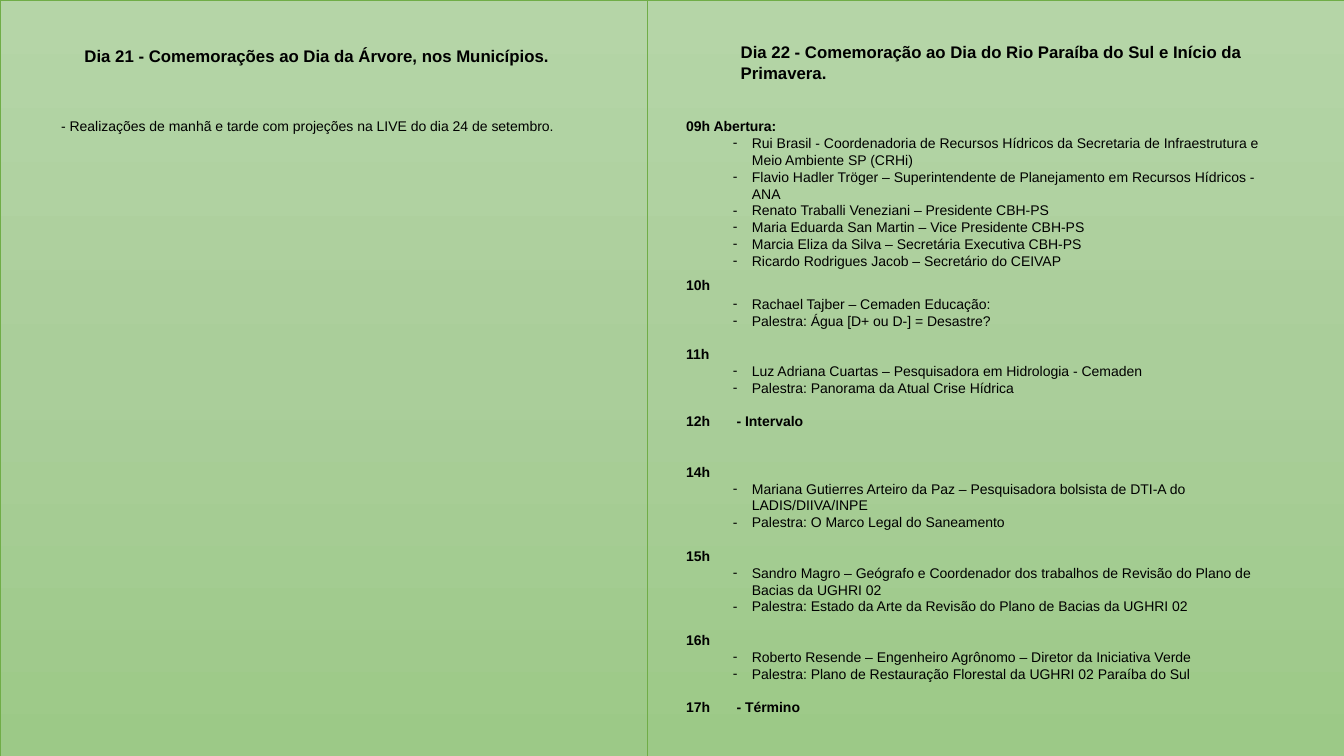
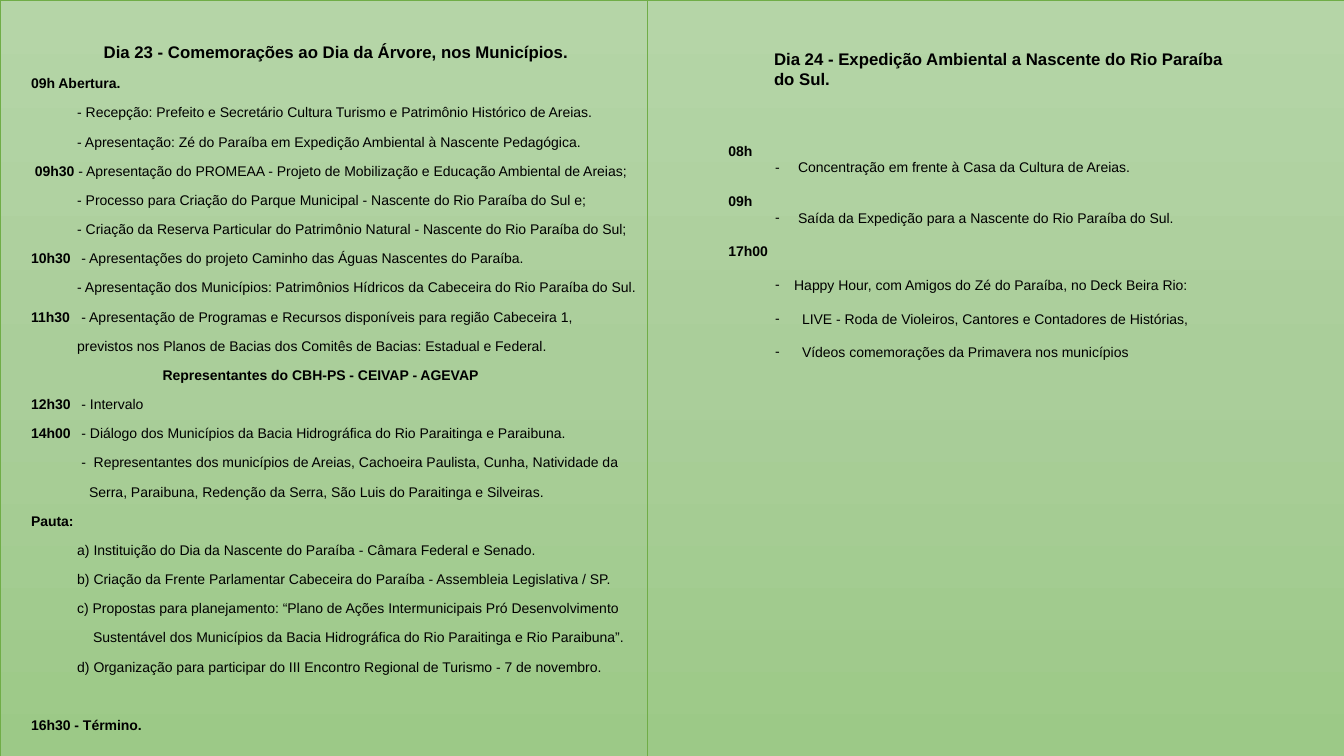
from copy import deepcopy

from pptx import Presentation
from pptx.dml.color import RGBColor
from pptx.enum.shapes import MSO_SHAPE
from pptx.oxml.ns import qn
from pptx.util import Pt
from lxml.etree import SubElement

SLIDE_W, SLIDE_H = 960, 540
PANEL_SPLIT = 462.5
FONT = "Arial"
BLACK = RGBColor(0x00, 0x00, 0x00)
GREEN_LINE = RGBColor(0x70, 0xAD, 0x47)
GREENS = [(0, RGBColor(0xB5, 0xD5, 0xA7)),
          (0.5, RGBColor(0xAA, 0xCE, 0x9A)),
          (1, RGBColor(0x9C, 0xC9, 0x87))]
TITLE_SIZE, BODY_SIZE = 12, 10
BLANK_LINE = 12
BULLET_AT = 33.4

# Paragraph styles; in each text the part before "|" is bold.
PLAIN = {}
GAP = {"before": BLANK_LINE}
BULLET = {"bullet": "-", "left": 47}
ITEM = {"left": 33}
BULLET_WIDE = {**BULLET, "left": 49.8}
BULLET_WIDEST = {**BULLET, "left": 52.6, **GAP}

DAY_21 = [
    ("- Realizações de manhã e tarde com projeções na LIVE do dia 24 de setembro.", PLAIN),
]
DAY_22_OPENING = [
    ("09h Abertura:|", PLAIN),
    ("Rui Brasil - Coordenadoria de Recursos Hídricos da Secretaria de Infraestrutura e "
     "Meio Ambiente SP (CRHi)", BULLET),
    ("Flavio Hadler Tröger – Superintendente de Planejamento em Recursos Hídricos - ANA", BULLET),
    ("Renato Traballi Veneziani – Presidente CBH-PS", BULLET),
    ("Maria Eduarda San Martin – Vice Presidente CBH-PS", BULLET),
    ("Marcia Eliza da Silva – Secretária Executiva CBH-PS", BULLET),
    ("Ricardo Rodrigues Jacob – Secretário do CEIVAP", BULLET),
]
DAY_22_TALKS = [
    ("10h|", PLAIN),
    ("Rachael Tajber – Cemaden Educação:", {**BULLET, "before": 1.6}),
    ("Palestra: Água [D+ ou D-] = Desastre?", BULLET),
    ("11h|", GAP),
    ("Luz Adriana Cuartas – Pesquisadora em Hidrologia - Cemaden", BULLET),
    ("Palestra: Panorama da Atual Crise Hídrica", BULLET),
    ("12h\t- Intervalo|", {**GAP, "tab": 42}),
    ("14h|", {"before": 2 * BLANK_LINE}),
    ("Mariana Gutierres Arteiro da Paz – Pesquisadora bolsista de DTI-A do "
     "LADIS/DIIVA/INPE", BULLET),
    ("Palestra: O Marco Legal do Saneamento", BULLET),
    ("15h|", GAP),
    ("Sandro Magro – Geógrafo e Coordenador dos trabalhos de Revisão do Plano de "
     "Bacias da UGHRI 02", BULLET),
    ("Palestra: Estado da Arte da Revisão do Plano de Bacias da UGHRI 02", BULLET),
    ("16h|", GAP),
    ("Roberto Resende – Engenheiro Agrônomo – Diretor da Iniciativa Verde", BULLET),
    ("Palestra: Plano de Restauração Florestal da UGHRI 02 Paraíba do Sul", BULLET),
    ("17h\t- Término|", {**GAP, "tab": 31}),
]
DAY_23 = [
    ("09h Abertura.|", PLAIN),
    ("- Recepção: Prefeito e Secretário Cultura Turismo e Patrimônio Histórico de Areias.", ITEM),
    ("- Apresentação: Zé do Paraíba em Expedição Ambiental à Nascente Pedagógica.", ITEM),
    ("09h30| - Apresentação do PROMEAA - Projeto de Mobilização e Educação Ambiental de Areias;",
     {"left": 2.8}),
    ("- Processo para Criação do Parque Municipal - Nascente do Rio Paraíba do Sul e;", ITEM),
    ("- Criação da Reserva Particular do Patrimônio Natural - Nascente do Rio Paraíba do Sul;", ITEM),
    ("10h30|\t- Apresentações do projeto Caminho das Águas Nascentes do Paraíba.", {"tab": 33.4}),
    ("- Apresentação dos Municípios: Patrimônios Hídricos da Cabeceira do Rio Paraíba do Sul.", ITEM),
    ("11h30|\t- Apresentação de Programas e Recursos disponíveis para região Cabeceira 1,",
     {"tab": 33.4}),
    ("previstos nos Planos de Bacias dos Comitês de Bacias: Estadual e Federal.", ITEM),
    ("Representantes do CBH-PS - CEIVAP - AGEVAP|", {"left": 94}),
    ("12h30|\t- Intervalo", {"tab": 36.2}),
    ("14h00|\t- Diálogo dos Municípios da Bacia Hidrográfica do Rio Paraitinga e Paraibuna.",
     {"tab": 36.2}),
    ("Representantes dos municípios de Areias, Cachoeira Paulista, Cunha, Natividade da",
     {"bullet": "-", "left": 44.8, "bullet_at": 35.9}),
    ("Serra, Paraibuna, Redenção da Serra, São Luis do Paraitinga e Silveiras.", {"left": 41.5}),
    ("Pauta:|", PLAIN),
    ("a) Instituição do Dia da Nascente do Paraíba - Câmara Federal e Senado.", ITEM),
    ("b) Criação da Frente Parlamentar Cabeceira do Paraíba - Assembleia Legislativa / SP.", ITEM),
    ("c) Propostas para planejamento: “Plano de Ações Intermunicipais Pró Desenvolvimento", ITEM),
    ("Sustentável dos Municípios da Bacia Hidrográfica do Rio Paraitinga e Rio Paraibuna”.",
     {"left": 44.4}),
    ("d) Organização para participar do III Encontro Regional de Turismo - 7 de novembro.", ITEM),
    ("16h30 - Término.|", {"before": 20.8}),
]
DAY_24 = [
    ("08h|", PLAIN),
    ("Concentração em frente à Casa da Cultura de Areias.", BULLET_WIDE),
    ("09h|", GAP),
    ("Saída da Expedição para a Nascente do Rio Paraíba do Sul.", BULLET_WIDE),
    ("17h00|", GAP),
    ("Happy Hour, com Amigos do Zé do Paraíba, no Deck Beira Rio:", {**BULLET, **GAP}),
    ("LIVE - Roda de Violeiros, Cantores e Contadores de Histórias,", BULLET_WIDEST),
    ("Vídeos comemorações da Primavera nos municípios", BULLET_WIDEST),
]

# Each slide: titles as (text, box), schedules as (rows, box, common format).
SPACED = {"line": 1.07, "after": 8}
SLIDES = [
    {"titles": [
        ("Dia 21 - Comemorações ao Dia da Árvore, nos Municípios.", (53.3, 28.8, 379.4, 36)),
        ("Dia 22 - Comemoração ao Dia do Rio Paraíba do Sul e Início da Primavera.",
         (522, 26.6, 392.4, 36))],
     "schedules": [
        (DAY_21, (36.5, 80.6, 376.7, 41), {}),
        (DAY_22_OPENING, (483, 80.6, 431.4, 116), {}),
        (DAY_22_TALKS, (483, 193.7, 431.4, 325), {})]},
    {"titles": [
        ("Dia 23 - Comemorações ao Dia da Árvore, nos Municípios.", (67, 26.6, 347.8, 36)),
        ("Dia 24 - Expedição Ambiental a Nascente do Rio Paraíba do Sul.",
         (545.8, 31, 347.8, 36))],
     "schedules": [
        (DAY_23, (15.1, 49, 451.4, 488), SPACED),
        (DAY_24, (513.2, 97.9, 420.5, 187), {})]},
]


def add_panel(slide, left, right):
    panel = slide.shapes.add_shape(MSO_SHAPE.RECTANGLE, Pt(left), 0, Pt(right - left), Pt(SLIDE_H))
    panel.shadow.inherit = False
    panel.line.color.rgb = GREEN_LINE
    panel.line.width = Pt(0.5)
    panel.fill.gradient()
    panel.fill.gradient_angle = 270
    stop_list = panel._element.spPr.find(".//" + qn("a:gsLst"))
    stop_list.insert(1, deepcopy(stop_list[0]))
    for stop, (position, green) in zip(panel.fill.gradient_stops, GREENS):
        stop.position = position
        stop.color.rgb = green


def write_paragraph(paragraph, text, size=BODY_SIZE, left=0, bullet=None, bullet_at=BULLET_AT,
                    tab=None, before=0, after=0, line=1.0):
    """Write one paragraph; the part of the text before "|" is bold."""
    paragraph.space_before, paragraph.space_after = Pt(before), Pt(after)
    paragraph.line_spacing = line
    properties = paragraph._p.get_or_add_pPr()
    properties.set("marL", str(Pt(left)))
    properties.set("indent", str(Pt(bullet_at - left) if bullet else 0))
    if bullet:
        SubElement(properties, qn("a:buFont"), typeface=FONT)
        SubElement(properties, qn("a:buChar"), char=bullet)
    else:
        SubElement(properties, qn("a:buNone"))
    if tab:
        tabs = SubElement(properties, qn("a:tabLst"))
        SubElement(tabs, qn("a:tab"), pos=str(Pt(tab)), algn="l")

    strong, mark, rest = text.partition("|")
    parts = [(strong, True), (rest, False)] if mark else [(text, False)]
    for part, bold in parts:
        if part:
            run = paragraph.add_run()
            run.text = part
            run.font.name, run.font.size, run.font.bold = FONT, Pt(size), bold
            run.font.color.rgb = BLACK


def add_text(slide, rows, box, **common):
    frame = slide.shapes.add_textbox(*map(Pt, box)).text_frame
    frame.word_wrap = True
    for index, (text, style) in enumerate(rows):
        paragraph = frame.add_paragraph() if index else frame.paragraphs[0]
        write_paragraph(paragraph, text, **{**common, **style})


def main():
    deck = Presentation()
    deck.slide_width, deck.slide_height = Pt(SLIDE_W), Pt(SLIDE_H)
    for content in SLIDES:
        slide = deck.slides.add_slide(deck.slide_layouts[6])
        add_panel(slide, 0, PANEL_SPLIT)
        add_panel(slide, PANEL_SPLIT, SLIDE_W)
        for title, box in content["titles"]:
            add_text(slide, [(title + "|", PLAIN)], box, size=TITLE_SIZE)
        for rows, box, common in content["schedules"]:
            add_text(slide, rows, box, **common)
    deck.save("out.pptx")


if __name__ == "__main__":
    main()
